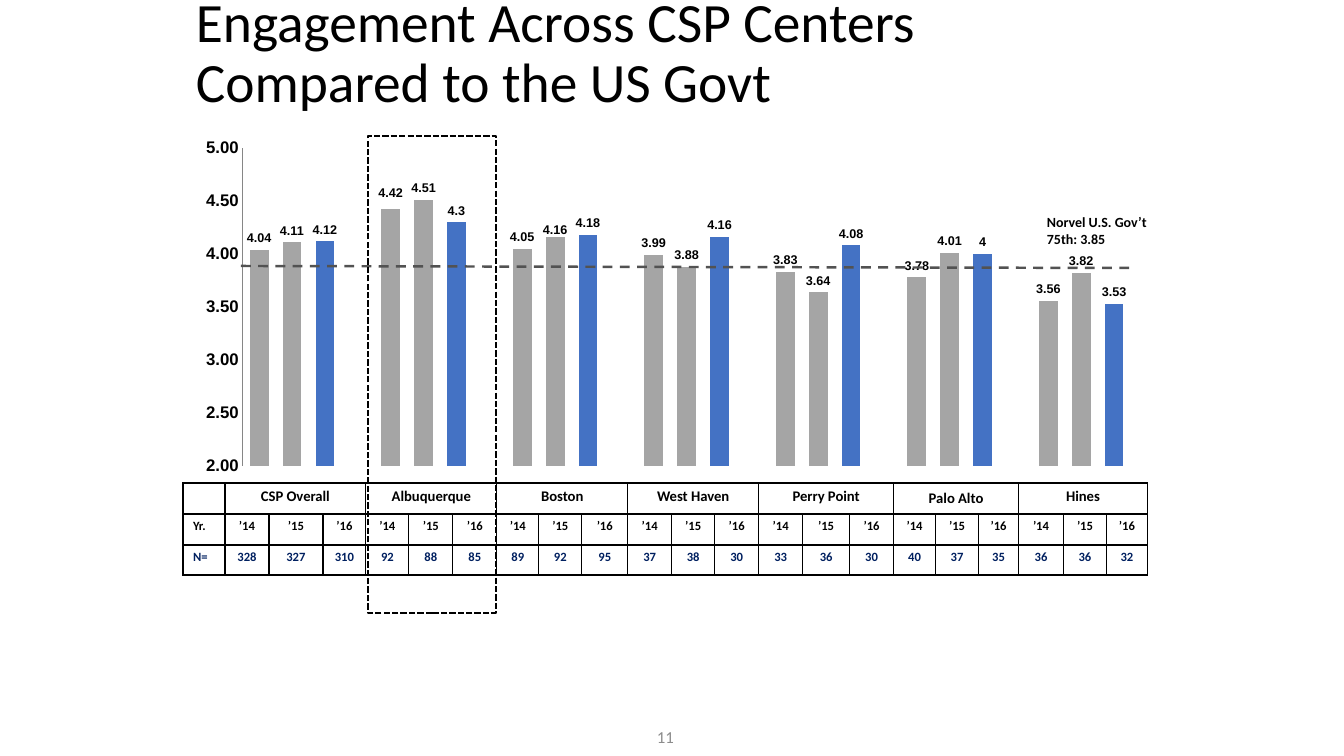
from lxml import etree
from pptx import Presentation
from pptx.chart.data import CategoryChartData
from pptx.dml.color import RGBColor
from pptx.enum.chart import XL_CHART_TYPE, XL_LABEL_POSITION, XL_TICK_MARK
from pptx.enum.dml import MSO_LINE
from pptx.enum.shapes import MSO_CONNECTOR, MSO_SHAPE
from pptx.enum.text import MSO_ANCHOR, PP_ALIGN
from pptx.oxml.ns import qn
from pptx.util import Emu, Pt

EMU_PER_PX = 914400 / 100.8
COLUMN_CLUSTERED = XL_CHART_TYPE.COLUMN_CLUSTERED
OUTSIDE_END = XL_LABEL_POSITION.OUTSIDE_END
NO_TICKS = XL_TICK_MARK.NONE
DASH, SQUARE_DASH = MSO_LINE.DASH, MSO_LINE.SQUARE_DOT
STRAIGHT, RECTANGLE = MSO_CONNECTOR.STRAIGHT, MSO_SHAPE.RECTANGLE
TOP, MIDDLE = MSO_ANCHOR.TOP, MSO_ANCHOR.MIDDLE
LEFT, CENTER = PP_ALIGN.LEFT, PP_ALIGN.CENTER

COLORS = {
    "text": "000000", "navy": "002060", "past": "A5A5A5", "current": "4472C4",
    "benchmark": "525252", "axis": "868686", "number": "8C8C8C",
}

YEARS = ["’14", "’15", "’16"]
# Center, scores per year, respondents per year
CENTERS = [
    ("CSP Overall", (4.04, 4.11, 4.12), (328, 327, 310)),
    ("Albuquerque", (4.42, 4.51, 4.3), (92, 88, 85)),
    ("Boston", (4.05, 4.16, 4.18), (89, 92, 95)),
    ("West Haven", (3.99, 3.88, 4.16), (37, 38, 30)),
    ("Perry Point", (3.83, 3.64, 4.08), (33, 36, 30)),
    ("Palo Alto", (3.78, 4.01, 4), (40, 37, 35)),
    ("Hines", (3.56, 3.82, 3.53), (36, 36, 32)),
]
COLUMN_WIDTHS = [42, 44, 54, 43, 43, 44, 44, 42, 43, 46, 44,
                 43, 44, 44, 47, 44, 42, 43, 40, 45, 43, 41]
ROW_HEIGHTS = [31, 31, 30]
# Vertical shift of single labels, as a share of the chart height
LABEL_SHIFTS = {4: -0.01, 9: 0.01}


def px(length):
    return Emu(round(length * EMU_PER_PX))


def box(*lengths):
    return [px(length) for length in lengths]


def color(name):
    return RGBColor.from_string(COLORS[name])


def set_font(font, size, name="Calibri", bold=False, tint="text"):
    values = {"size": Pt(size), "name": name, "bold": bold}
    for attribute, value in values.items():
        setattr(font, attribute, value)
    font.color.rgb = color(tint)


def add_text(slide, place, text, size, anchor=TOP, spacing=None, **font_values):
    frame = slide.shapes.add_textbox(*box(*place)).text_frame
    frame.word_wrap = True
    frame.vertical_anchor = anchor
    paragraph = frame.paragraphs[0]
    paragraph.line_spacing = spacing
    run = paragraph.add_run()
    run.text = text
    set_font(run.font, size, **font_values)


def style_line(line, tint, width, dash):
    line.color.rgb = color(tint)
    line.width = Pt(width)
    line.dash_style = dash


def add_layout(parent, index, **values):
    layout = etree.Element(qn("c:layout"))
    manual = etree.SubElement(layout, qn("c:manualLayout"))
    for tag, value in values.items():
        etree.SubElement(manual, qn(f"c:{tag}"), val=str(value))
    parent.insert(index, layout)


def add_score_chart(slide):
    scores = []
    for _, center_scores, _ in CENTERS:
        scores += [*center_scores, None]
    scores.pop()
    data = CategoryChartData()
    data.categories = [str(number + 1) for number in range(len(scores))]
    data.add_series("Series 1", scores)
    chart = slide.shapes.add_chart(
        COLUMN_CLUSTERED, *box(183, 95, 964, 469), data).chart
    chart.has_legend = chart.has_title = False
    set_font(chart.font, 14, "Arial")

    # Axes
    chart.category_axis.visible = False
    axis = chart.value_axis
    values = {"minimum_scale": 2, "maximum_scale": 5, "major_unit": 0.5,
              "has_major_gridlines": False, "major_tick_mark": NO_TICKS,
              "minor_tick_mark": NO_TICKS}
    for attribute, value in values.items():
        setattr(axis, attribute, value)
    axis.tick_labels.number_format = "0.00"
    axis.tick_labels.number_format_is_linked = False
    set_font(axis.tick_labels.font, 12, "Arial", True)
    axis.format.line.color.rgb = color("axis")

    # Bars: the last year of each center stands out
    plot = chart.plots[0]
    plot.gap_width = 75
    plot.vary_by_categories = False
    series = plot.series[0]
    series.format.fill.solid()
    series.format.fill.fore_color.rgb = color("past")
    for index in range(2, len(scores), 4):
        fill = series.points[index].format.fill
        fill.solid()
        fill.fore_color.rgb = color("current")

    # Labels
    labels = series.data_labels
    labels.show_value = True
    labels.position = OUTSIDE_END
    set_font(labels.font, 9, "Arial", True)
    for index in LABEL_SHIFTS:
        label = series.points[index].data_label
        set_font(label.font, 9, "Arial", True)
        label.position = OUTSIDE_END
    for element in series._element.iter(qn("c:dLbl")):
        index = int(element.find(qn("c:idx")).get("val"))
        add_layout(element, 1, x=0, y=LABEL_SHIFTS[index])

    # Plot area
    area = chart._chartSpace.find(".//" + qn("c:plotArea"))
    for layout in area.findall(qn("c:layout")):
        area.remove(layout)
    add_layout(area, 0, layoutTarget="inner", xMode="edge", yMode="edge",
               x=0.062, y=0.113, w=0.921, h=0.678)


def add_borders(cell):
    properties = cell._tc.get_or_add_tcPr()
    for index, side in enumerate(("lnL", "lnR", "lnT", "lnB")):
        line = etree.Element(qn(f"a:{side}"), w=str(Pt(1)))
        fill = etree.SubElement(line, qn("a:solidFill"))
        etree.SubElement(fill, qn("a:srgbClr"), val=COLORS["text"])
        properties.insert(index, line)


def fill_cell(cell, text, size, align=CENTER, tint="text"):
    cell.fill.background()
    add_borders(cell)
    paragraph = cell.text_frame.paragraphs[0]
    paragraph.alignment = align
    if text:
        run = paragraph.add_run()
        run.text = text
        set_font(run.font, size, bold=True, tint=tint)
    else:
        etree.SubElement(paragraph._p, qn("a:endParaRPr"), sz=str(int(size * 100)))


def add_respondent_table(slide):
    place = box(183, 483, sum(COLUMN_WIDTHS), sum(ROW_HEIGHTS))
    table = slide.shapes.add_table(
        len(ROW_HEIGHTS), len(COLUMN_WIDTHS), *place).table
    table.first_row = table.horz_banding = False
    for column, width in zip(table.columns, COLUMN_WIDTHS):
        column.width = px(width)
    for row, height in zip(table.rows, ROW_HEIGHTS):
        row.height = px(height)

    names, years, counts = [""], ["Yr."], ["N="]
    for name, _, respondents in CENTERS:
        names += [name, "", ""]
        years += YEARS
        counts += [str(count) for count in respondents]
    rows = [(names, 10.5, "text"), (years, 9, "text"), (counts, 9, "navy")]
    for row, (texts, size, tint) in enumerate(rows):
        for column, text in enumerate(texts):
            align = CENTER if column else LEFT
            fill_cell(table.cell(row, column), text, size, align, tint)
    for column in range(1, len(names), len(YEARS)):
        table.cell(0, column).merge(table.cell(0, column + 2))
    table.cell(0, names.index("Palo Alto")).vertical_anchor = MIDDLE


def add_benchmark_line(slide):
    line = slide.shapes.add_connector(STRAIGHT, *box(241, 266, 1135, 268))
    style_line(line.line, "benchmark", 1.75, DASH)
    etree.SubElement(line._element.spPr, qn("a:effectLst"))


def add_highlight_frame(slide):
    shape = slide.shapes.add_shape(RECTANGLE, *box(368, 136, 128, 477))
    shape.shadow.inherit = False
    shape.fill.background()
    style_line(shape.line, "text", 1.5, SQUARE_DASH)


def main():
    presentation = Presentation()
    presentation.slide_width, presentation.slide_height = box(1344, 756)
    slide = presentation.slides.add_slide(presentation.slide_layouts[6])
    add_score_chart(slide)
    add_text(slide, (186, 22, 963, 65),
             "Engagement Across CSP Centers Compared to the US Govt",
             39.6, MIDDLE, 0.9)
    add_respondent_table(slide)
    add_benchmark_line(slide)
    add_text(slide, (1037, 209, 139, 44), "Norvel U.S. Gov’t 75th: 3.85", 10, bold=True)
    add_highlight_frame(slide)
    add_text(slide, (647, 711, 235, 52), "11", 12, MIDDLE, tint="number")
    presentation.save("out.pptx")


if __name__ == "__main__":
    main()
